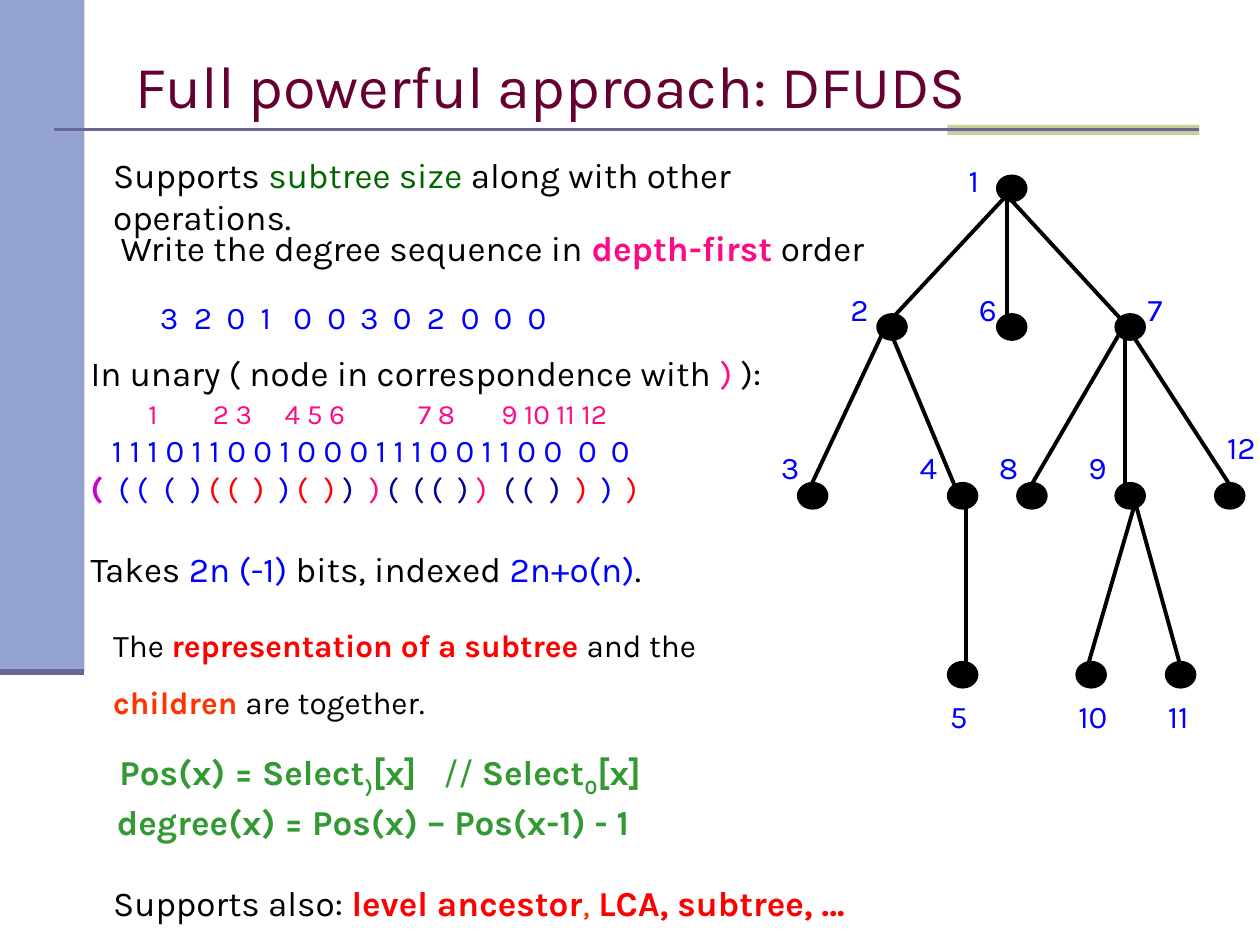
from typing import NamedTuple

from lxml import etree
from pptx import Presentation
from pptx.dml.color import RGBColor
from pptx.enum.shapes import MSO_CONNECTOR, MSO_SHAPE
from pptx.enum.text import MSO_ANCHOR
from pptx.oxml.ns import qn
from pptx.util import Inches, Pt

RECTANGLE, OVAL = MSO_SHAPE.RECTANGLE, MSO_SHAPE.OVAL
STRAIGHT = MSO_CONNECTOR.STRAIGHT
MIDDLE, TOP = MSO_ANCHOR.MIDDLE, MSO_ANCHOR.TOP

FONT = "Karla"
BLACK, BLUE, NAVY, RED = "000000", "0000FF", "000099", "FF0000"
PINK, PURPLE, GREEN, ORANGE = "FF0A85", "CC00CC", "339933", "FF3300"
DARK_GREEN, PLUM, SLATE = "006600", "660033", "666699"
NODE_WIDTH, NODE_HEIGHT = 0.24, 0.21


class Phrase(NamedTuple):
    text: str
    color: str = BLACK
    bold: bool = False
    size: float | None = None
    subscript: bool = False


class Line(NamedTuple):
    phrases: list[Phrase]
    size: float = 20
    spacing: float | None = None
    before: float = 0
    tabs: tuple[float, ...] = ()


class Node(NamedTuple):
    label: str
    left: float
    top: float
    label_left: float
    label_top: float


class Edge(NamedTuple):
    parent: str
    child: str
    leave: tuple[float, float] = (0.08, 0.08)
    arrive: tuple[float, float] = (0.08, 0.08)


def rgb(color: str) -> RGBColor:
    return RGBColor.from_string(color)


def add_block(slide, kind, left: float, top: float, width: float, height: float,
              fill: str, outline: str | None = None) -> None:
    block = slide.shapes.add_shape(kind, Inches(left), Inches(top), Inches(width), Inches(height))
    block.shadow.inherit = False
    block.fill.solid()
    block.fill.fore_color.rgb = rgb(fill)
    if outline:
        block.line.color.rgb = rgb(outline)
        block.line.width = Pt(0.75)
    else:
        block.line.fill.background()


def add_rule(slide, start: tuple[float, float], end: tuple[float, float],
             color: str, width: float) -> None:
    rule = slide.shapes.add_connector(STRAIGHT, *map(Inches, start + end))
    rule.line.color.rgb = rgb(color)
    rule.line.width = Pt(width)
    etree.SubElement(rule._element.spPr, qn("a:effectLst"))


def add_text(slide, left: float, top: float, width: float, height: float,
             lines: list[Line], wrap: bool = True, anchor=TOP) -> None:
    frame = slide.shapes.add_textbox(
        Inches(left), Inches(top), Inches(width), Inches(height)).text_frame
    frame.word_wrap = wrap
    frame.vertical_anchor = anchor
    for index, line in enumerate(lines):
        paragraph = frame.add_paragraph() if index else frame.paragraphs[0]
        if line.tabs:
            stops = etree.SubElement(paragraph._p.get_or_add_pPr(), qn("a:tabLst"))
            for stop in line.tabs:
                etree.SubElement(stops, qn("a:tab"), pos=str(Inches(stop)), algn="l")
        if line.spacing:
            paragraph.line_spacing = line.spacing
        if line.before:
            paragraph.space_before = Pt(line.before)
        for phrase in line.phrases:
            run = paragraph.add_run()
            run.text = phrase.text
            run.font.name = FONT
            run.font.size = Pt(phrase.size or line.size)
            run.font.bold = phrase.bold
            run.font.color.rgb = rgb(phrase.color)
            if phrase.subscript:
                run.font._element.set("baseline", "-25000")


def add_tree(slide, nodes: list[Node], edges: list[Edge]) -> None:
    by_label = {node.label: node for node in nodes}
    for node in nodes:
        add_block(slide, OVAL, node.left, node.top, NODE_WIDTH, NODE_HEIGHT, BLACK, BLACK)
    for edge in edges:
        parent, child = by_label[edge.parent], by_label[edge.child]
        add_rule(slide, (parent.left + edge.leave[0], parent.top + edge.leave[1]),
                 (child.left + edge.arrive[0], child.top + edge.arrive[1]), BLACK, 2.25)
    for node in nodes:
        width = 0.34 if len(node.label) == 1 else 0.48
        add_text(slide, node.label_left, node.label_top, width, 0.4,
                 [Line([Phrase(node.label, BLUE)], 18)], wrap=False)


NODES = [
    Node("1", 7.91, 1.39, 7.59, 1.23),
    Node("2", 6.96, 2.49, 6.65, 2.25),
    Node("6", 7.91, 2.49, 7.67, 2.25),
    Node("7", 8.85, 2.49, 9.01, 2.25),
    Node("3", 6.33, 3.83, 6.1, 3.51),
    Node("4", 7.52, 3.83, 7.2, 3.51),
    Node("8", 8.07, 3.83, 7.83, 3.51),
    Node("9", 8.85, 3.83, 8.54, 3.51),
    Node("12", 9.64, 3.83, 9.64, 3.35),
    Node("5", 7.52, 5.25, 7.44, 5.48),
    Node("10", 8.54, 5.25, 8.46, 5.48),
    Node("11", 9.25, 5.25, 9.17, 5.48),
]
LOW, LOW_RIGHT = (0.08, 0.16), (0.16, 0.16)
EDGES = [
    *(Edge("1", child, LOW) for child in ("2", "6", "7")),
    Edge("2", "3"), Edge("2", "4"), Edge("7", "8"), Edge("7", "9"),
    Edge("7", "12", arrive=(0.16, 0.08)),
    Edge("4", "5", (0.15, 0.08), (0.15, 0.07)),
    Edge("9", "10", LOW_RIGHT), Edge("9", "11", LOW_RIGHT, (0.15, 0.15)),
]

# Unary encoding: node numbers, bits and parentheses in aligned rows
ENCODING = [
    Line([Phrase("In unary ( node in correspondence with "), Phrase(") ", PINK), Phrase("):")]),
    Line([Phrase("\t", PINK, size=18), Phrase("1\t2 3\t4 5 6\t7 8\t9 10 11 12", PINK)],
         16, tabs=(0.46, 0.97, 1.54, 2.6, 3.26)),
    Line([Phrase("\t1 1 1 0 1 1 0 0 1 0 0 0 1 1 1 0 0 1 1 0 0\t0\t0", BLUE)],
         18, tabs=(0.17, 3.87, 4.13)),
    Line([Phrase("(", PURPLE, True), Phrase("\t( (\t(\t) ", BLUE), Phrase("( (\t)\t", RED),
          Phrase(") ", BLUE), Phrase("(\t) ", RED), Phrase(")\t", NAVY), Phrase(") ", PINK),
          Phrase("(\t( (\t) ", NAVY), Phrase(")\t", PINK), Phrase("( (\t)\t", NAVY),
          Phrase(")", RED), Phrase("\t)\t", BLUE), Phrase(")", RED)],
         18, tabs=(0.22, 0.58, 0.79, 1.29, 1.49, 1.85, 2.21, 2.56, 2.91,
                   3.28, 3.64, 3.85, 4.05, 4.25)),
    Line([Phrase("Takes "), Phrase("2n (-1)", BLUE), Phrase(" bits, indexed "),
          Phrase("2n+o(n)", BLUE), Phrase(".")], before=23.4),
]


def main() -> None:
    deck = Presentation()
    deck.slide_width, deck.slide_height = Inches(10), Inches(7.5)
    slide = deck.slides.add_slide(deck.slide_layouts[6])

    # Side band and title rule
    add_block(slide, RECTANGLE, 0, 0, 0.67, 5.33, "95A3D1")
    add_block(slide, RECTANGLE, 7.52, 0.99, 2, 0.08, "CCCC99")
    add_rule(slide, (0.43, 1.03), (9.52, 1.03), SLATE, 1.5)
    add_rule(slide, (0, 5.33), (0.67, 5.33), SLATE, 3.5)
    add_text(slide, 0.98, 0.28, 8.5, 0.79,
             [Line([Phrase("Full powerful approach: DFUDS", PLUM)], 34)], anchor=MIDDLE)

    # Degree sequence
    add_text(slide, 0.8, 1.17, 6.43, 0.44, [Line([
        Phrase("Supports "), Phrase("subtree size", DARK_GREEN),
        Phrase(" along with other operations.")])])
    add_text(slide, 0.86, 1.75, 6.18, 0.44, [Line([
        Phrase("Write the degree sequence in "), Phrase("depth-first", PINK, True),
        Phrase(" order")])])
    degrees = "3 2 0 1 0 0 3 0 2 0 0 0".split()
    add_text(slide, 1.17, 2.32, 4.07, 0.4, [Line(
        [Phrase("\t".join(degrees), BLUE)], 18,
        tabs=tuple(round(0.265 * step, 2) for step in range(1, len(degrees))))])
    add_text(slide, 0.62, 2.74, 8.02, 2.02, ENCODING)

    add_tree(slide, NODES, EDGES)

    # Properties and operations
    add_text(slide, 0.8, 4.77, 5.09, 1.01, [
        Line([Phrase("The "), Phrase("representation of a subtree ", RED, True),
              Phrase("and the")], 18, 1.5),
        Line([Phrase("children ", ORANGE, True), Phrase("are together.")], 18, 1.5)])
    add_text(slide, 0.85, 5.72, 4.84, 0.54, [Line([
        Phrase("Pos(x) = Select", GREEN, True), Phrase(")", GREEN, True, subscript=True),
        Phrase("[x]\t", GREEN, True), Phrase("// ", GREEN), Phrase("Select", GREEN, True),
        Phrase("0", GREEN, True, subscript=True), Phrase("[x]", GREEN, True)],
        spacing=1.5, tabs=(2.57,))])
    add_text(slide, 0.83, 6.14, 4.96, 0.61, [Line(
        [Phrase("degree(x) = Pos(x) – Pos(x-1) - 1", GREEN, True)], spacing=1.5)])
    add_text(slide, 0.8, 6.78, 6.43, 0.61, [Line([
        Phrase("Supports also: "), Phrase("level ancestor", RED, True), Phrase(", ", ORANGE),
        Phrase("LCA, subtree, …", RED, True)], spacing=1.5)])

    deck.save("out.pptx")


if __name__ == "__main__":
    main()
